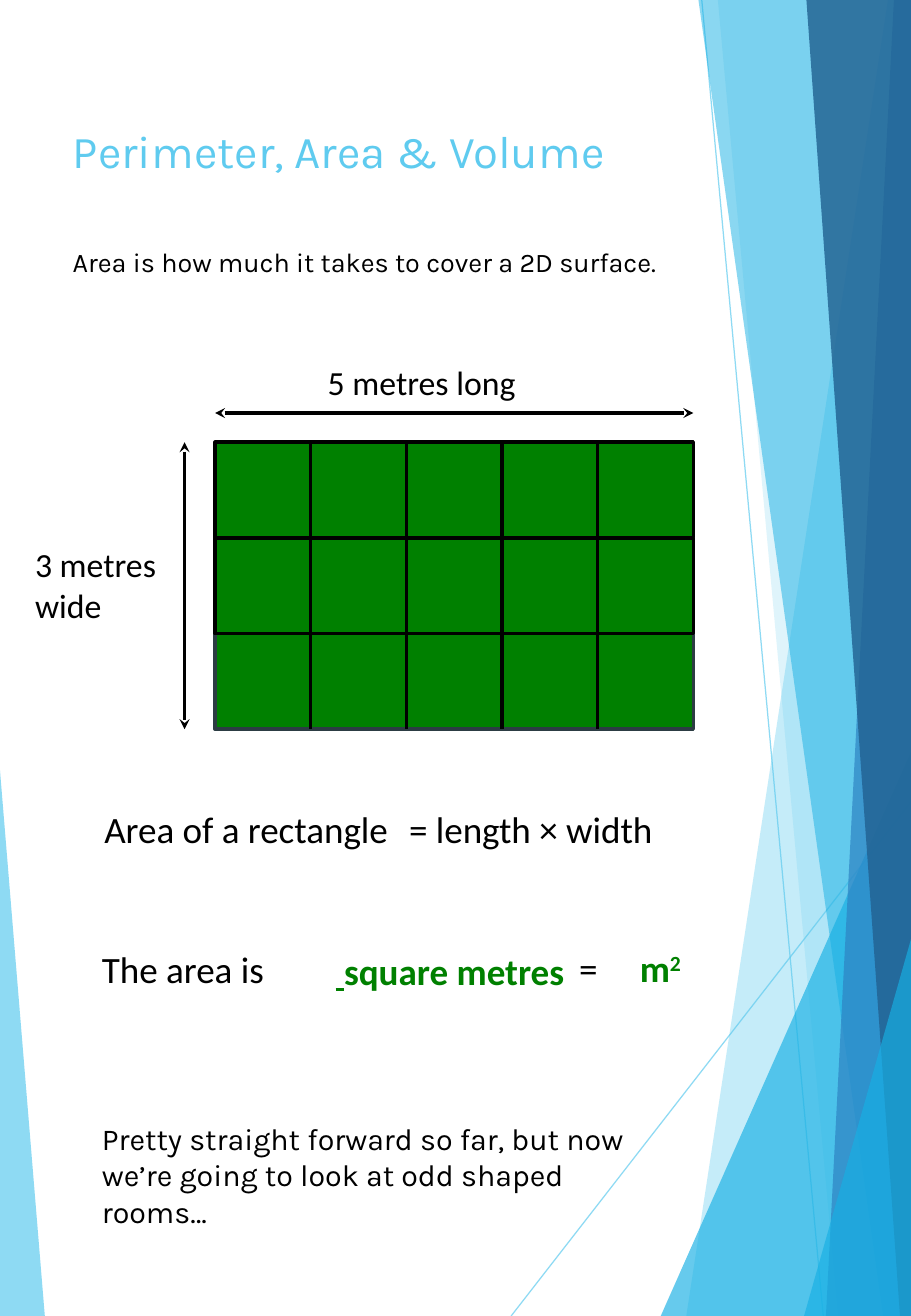
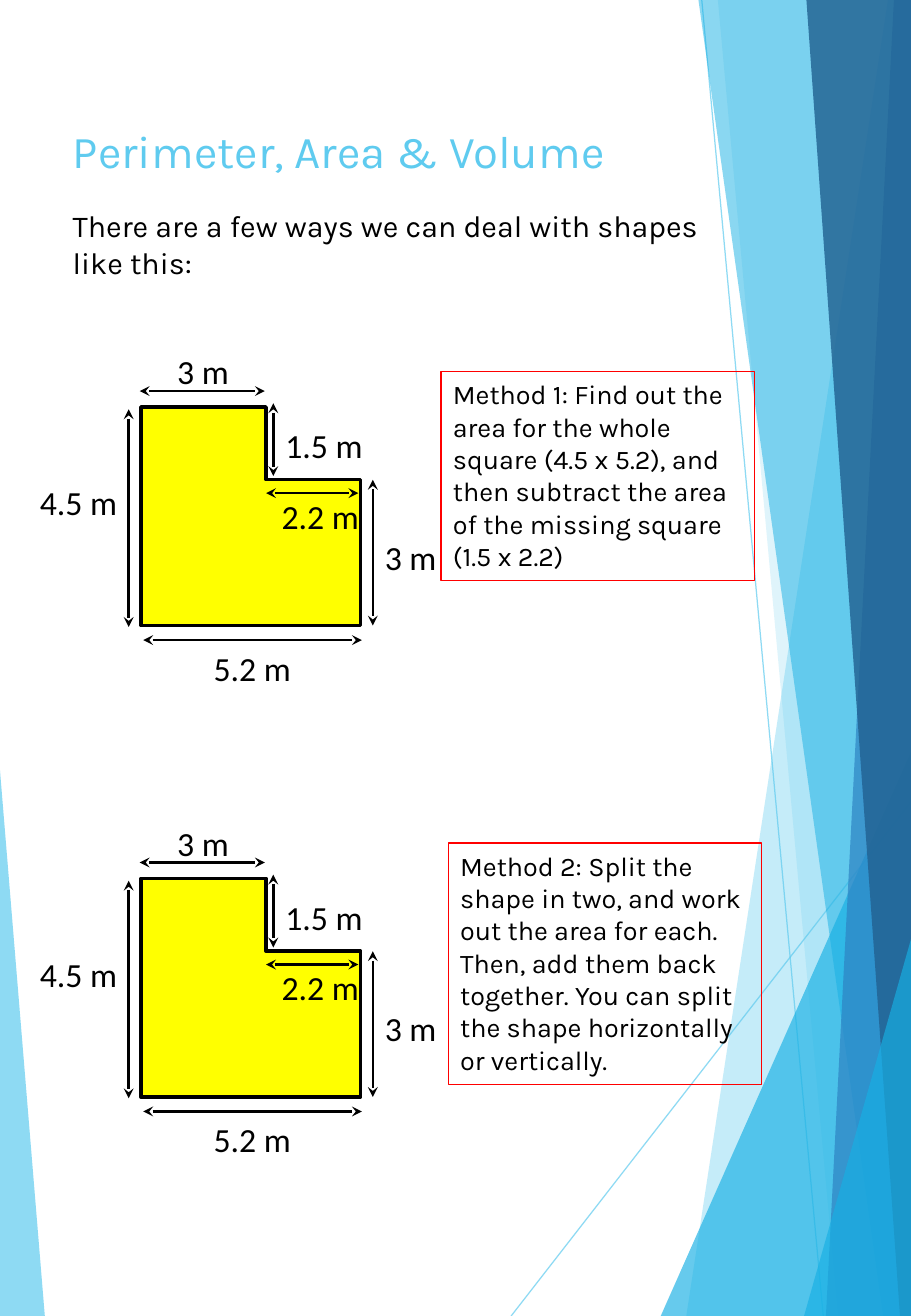
from dataclasses import dataclass
from lxml.etree import SubElement
from pptx import Presentation
from pptx.dml.color import RGBColor
from pptx.enum.shapes import MSO_CONNECTOR, MSO_SHAPE
from pptx.enum.text import MSO_ANCHOR, MSO_AUTO_SIZE, PP_ALIGN
from pptx.oxml.ns import qn
from pptx.util import Pt


@dataclass(frozen=True)
class Theme:
    sky: str = "5FCBEF"
    cyan: str = "17B0E4"
    blue: str = "2E83C3"
    navy: str = "226292"
    ink: str = "000000"
    slate: str = "2C3C43"
    green: str = "008000"
    yellow: str = "FFFF00"
    red: str = "FF0000"
    hair: float = 0.75
    thin: float = 1.5
    thick: float = 2


T = Theme()
STYLES = {  # font, size, colour
    "title": ("Karla", 27, T.sky),
    "body": ("Karla", 18, T.ink),
    "small": ("Karla", 16, T.ink),
    "label": ("Calibri", 20, T.ink),
    "math": ("Calibri", 22, T.ink),
    "answer": ("Calibri", 22, T.green),
}

W, H = 540, 780
TITLE = "Perimeter, Area & Volume"
TITLE_BOX = (36, 69, 375, 150.5)

# corner points, colour, opacity in percent
LEFT_BAND = ([(0, 456.5), (26.6, H), (0, H)], T.sky, 70)
RAYS = [((303, H), (W, 475.2)), ((416, 0), (488, H))]
BANDS = [
    ([(526.3, 0), (406.8, H), (W, H), (W, 0)], T.sky, 36),
    ([(425.5, 0), (496.8, H), (W, H), (W, 0)], T.sky, 20),
    ([(391.7, H), (W, 445.7), (W, H)], T.cyan, 66),
    ([(414, 0), (523.4, H), (W, H), (W, 0)], T.cyan, 50),
    ([(529.9, 0), (489.6, H), (W, H), (W, 0)], T.blue, 70),
    ([(478, 0), (533.5, H), (W, H), (W, 0)], T.navy, 82),
    ([(476.6, H), (W, 556.6), (W, H)], T.cyan, 66),
]

# box, then runs of text, style and extra font values
AREA = [
    ((36, 141.8, 365, 26.6),
     [("Area is how much it takes to cover a 2D surface.", "small", {})]),
    ((187.2, 211, 156.2, 51), [("5\u00a0metres long", "label", {})]),
    ((13.7, 319, 89.3, 73.4), [("3\u00a0metres wide", "label", {})]),
    ((54.7, 474.5, 236.9, 51), [("Area of a rectangle", "math", {})]),
    ((235.4, 474.5, 236.9, 51), [("= length × width", "math", {})]),
    ((53.3, 557.3, 154, 51), [("The area is", "math", {})]),
    ((191.9, 558.7, 162, 51),
     [(" ", "answer", {"bold": True, "underline": True}),
      ("square metres", "answer", {"bold": True})]),
    ((336.2, 556.6, 92.9, 51),
     [("=\t", "math", {}), ("m", "answer", {"bold": True}),
      ("2", "answer", {"bold": True, "raised": True})]),
    ((53.3, 660.2, 347.8, 72.7),
     [("Pretty straight forward so far, but now we’re going to look at odd "
       "shaped rooms…", "body", {})]),
]
TAB = 36
GRID = (127.5, 262.1)
SIDE, COLS = 56.7, 5
ROWS = [T.ink, T.ink, T.slate]
GRID_SPANS = [((127.5, 244.8), (411, 244.8)), ((109.4, 262.1), (109.4, 432.2))]

INTRO = ((36, 119.5, 387.4, 51),
         [("There are a few ways we can deal with shapes like this:", "body", {})])
# figure origin, frame box, text
METHODS = [
    ((83.5, 241.2), (261.4, 220.3, 185.8, 123.8),
     "Method 1: Find out the area for the whole square (4.5 x 5.2), and then "
     "subtract the area of the missing square (1.5 x 2.2)"),
    ((83.5, 520.6), (265.7, 499.7, 185.8, 143.3),
     "Method 2: Split the shape in two, and work out the area for each. Then, "
     "add them back together. You can split the shape horizontally or vertically."),
]
# measured from the figure's top left corner
ROOM = [(0, 0), (74.2, 0), (74.2, 43.2), (130.2, 43.2), (130.2, 129.6), (0, 129.6)]
SIZES = [  # text, text corner, arrow ends
    ("3 m", (14.4, -36.7), (-0.7, -9.4), (73.5, -9.4)),
    ("5.2 m", (36, 139), (1.4, 138.2), (131, 138.2)),
    ("4.5 m", (-67, 41), (-7.2, 1.4), (-7.2, 130.4)),
    ("3 m", (137.5, 73.4), (137.5, 43.2), (137.5, 129.6)),
    ("1.5 m", (78.5, 7.2), (78.5, -2.2), (78.5, 41)),
    ("2.2 m", (76.3, 49), (74.2, 51.1), (128.9, 51.1)),
]
LABEL = (62, 31.7)


def pts(vals):
    return [Pt(v) for v in vals]


def shift(point, by):
    return point[0] + by[0], point[1] + by[1]


def fade(shape, alpha):
    """Set the opacity, in percent, of the shape's own colour."""
    tint = shape._element.spPr.find(".//" + qn("a:srgbClr"))
    SubElement(tint, qn("a:alpha"), val=str(alpha * 1000))


def paint(shape, fill=None, edge=None, width=T.hair):
    shape.shadow.inherit = False
    if fill:
        shape.fill.solid()
        shape.fill.fore_color.rgb = RGBColor.from_string(fill)
    else:
        shape.fill.background()
    if edge:
        shape.line.color.rgb = RGBColor.from_string(edge)
        shape.line.width = Pt(width)
    else:
        shape.line.fill.background()
    return shape


def outline(slide, points):
    """Build a closed freeform through the points."""
    first, *rest = [pts(p) for p in points]
    form = slide.shapes.build_freeform(*first)
    form.add_line_segments(rest, close=True)
    return form.convert_to_shape()


def line(slide, start, end, color=T.ink, width=T.thick, arrows=False):
    link = slide.shapes.add_connector(
        MSO_CONNECTOR.STRAIGHT, *pts(start), *pts(end))
    link.line.color.rgb = RGBColor.from_string(color)
    link.line.width = Pt(width)
    props = link._element.spPr
    if arrows:
        for tip in ("a:headEnd", "a:tailEnd"):
            SubElement(props.find(qn("a:ln")), qn(tip), type="stealth")
    SubElement(props, qn("a:effectLst"))
    return link


def write(shape, runs):
    frame = shape.text_frame
    for key, val in {"word_wrap": True, "auto_size": MSO_AUTO_SIZE.NONE,
                     "vertical_anchor": MSO_ANCHOR.TOP}.items():
        setattr(frame, key, val)
    para = frame.paragraphs[0]
    para.alignment = PP_ALIGN.LEFT
    for text, style, extra in runs:
        run = para.add_run()
        run.text = text
        name, size, color = STYLES[style]
        look = {"name": name, "size": Pt(size), **extra}
        if look.pop("raised", False):
            run.font._element.set("baseline", "30000")
        for key, val in look.items():
            setattr(run.font, key, val)
        run.font.color.rgb = RGBColor.from_string(color)
        if "\t" in text:
            tabs = SubElement(para._p.get_or_add_pPr(), qn("a:tabLst"))
            SubElement(tabs, qn("a:tab"), pos=str(Pt(TAB)), algn="l")


def note(slide, box, runs):
    write(slide.shapes.add_textbox(*pts(box)), runs)


def start(deck, layout):
    slide = deck.slides.add_slide(layout)
    write(slide.shapes.title, [(TITLE, "title", {})])
    return slide


def band(slide, points, color, alpha):
    shape = paint(outline(slide, points), color)
    fade(shape, alpha)
    return shape


def dress(layout, slide):
    """Draw the shared bands once and move them to the layout."""
    parts = [band(slide, *LEFT_BAND)]
    for ends in RAYS:
        ray = line(slide, *ends, T.sky, T.hair)
        fade(ray, 70)
        parts.append(ray)
    parts += [band(slide, *spec) for spec in BANDS]
    for part in parts:
        layout.shapes._spTree.append(part._element)


def grid(slide):
    left, top = GRID
    wide, high = COLS * SIDE, len(ROWS) * SIDE
    for row, edge in reversed(list(enumerate(ROWS))):
        box = (left, top + row * SIDE, wide, SIDE)
        strip = slide.shapes.add_shape(MSO_SHAPE.RECTANGLE, *pts(box))
        paint(strip, T.green, edge, T.thick)
    for row in range(1, len(ROWS)):
        y = top + row * SIDE
        line(slide, (left, y), (left + wide, y))
    for col in range(1, COLS):
        x = left + col * SIDE
        line(slide, (x, top), (x, top + high))
    for ends in GRID_SPANS:
        line(slide, *ends, arrows=True)


def room(slide, origin):
    shape = outline(slide, [shift(p, origin) for p in ROOM])
    paint(shape, T.yellow, T.ink, T.thick)
    for text, corner, head, tail in SIZES:
        line(slide, shift(head, origin), shift(tail, origin),
             width=T.thin, arrows=True)
        note(slide, (*shift(corner, origin), *LABEL), [(text, "label", {})])


def main():
    deck = Presentation()
    deck.slide_width, deck.slide_height = Pt(W), Pt(H)
    layout = deck.slide_layouts[5]
    for holder in list(layout.placeholders):
        if holder.placeholder_format.idx:
            layout.shapes._spTree.remove(holder._element)
        else:
            for key, val in zip(("left", "top", "width", "height"), TITLE_BOX):
                setattr(holder, key, Pt(val))

    first = start(deck, layout)
    dress(layout, first)
    grid(first)
    for box, runs in AREA:
        note(first, box, runs)

    second = start(deck, layout)
    note(second, *INTRO)
    for origin, box, text in METHODS:
        room(second, origin)
        frame = second.shapes.add_shape(MSO_SHAPE.RECTANGLE, *pts(box))
        write(paint(frame, edge=T.red), [(text, "small", {})])
    deck.save("out.pptx")


if __name__ == "__main__":
    main()
